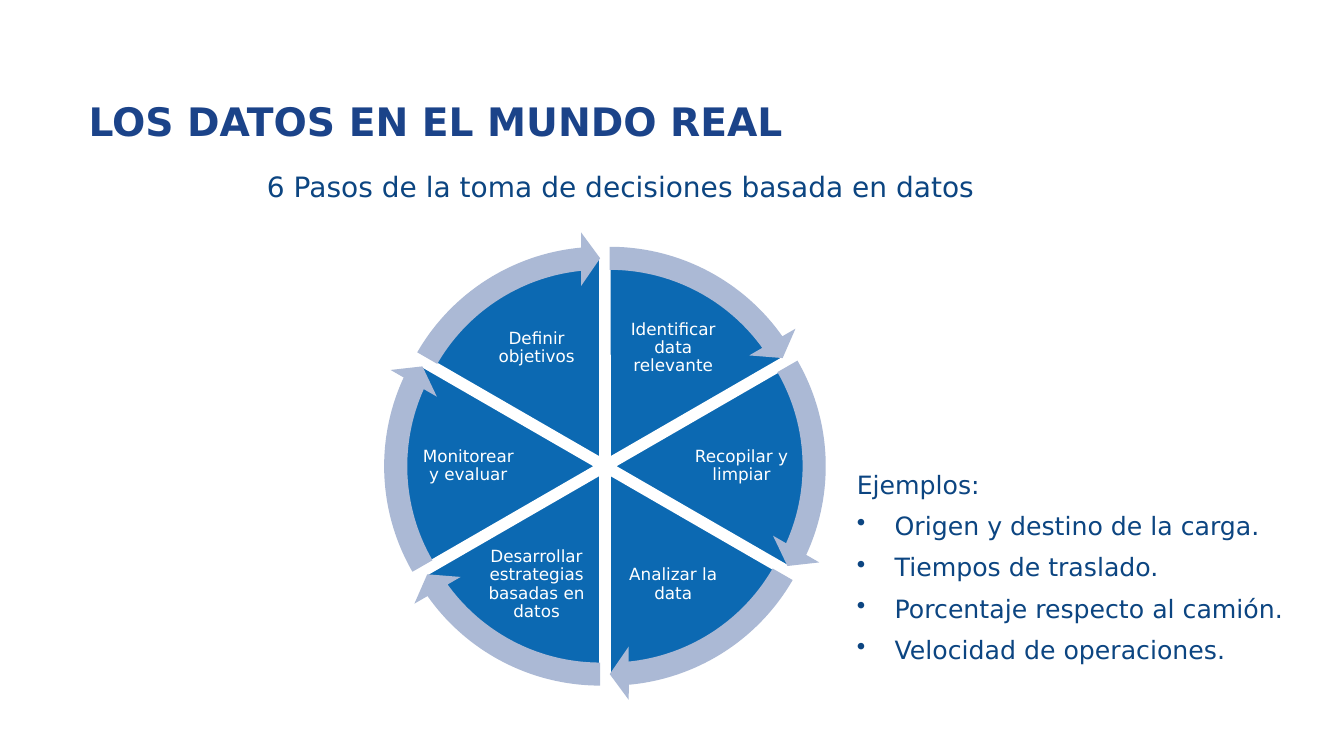
import math

import pptx
import pptx.dml.color
import pptx.enum.shapes
import pptx.enum.text
import pptx.oxml
import pptx.oxml.ns
import pptx.util

SHAPES = pptx.enum.shapes.MSO_SHAPE
CELL = 0.25  # side of one square grid cell, in inches
TURN = 216   # full circle in shape adjustment units


def cells(count):
    return pptx.util.Inches(count * CELL)


def color(hex_text):
    return pptx.dml.color.RGBColor.from_string(hex_text)


class Deck:
    font = "DejaVu Sans"
    title_blue, text_blue = "1B4389", "0C4581"
    wedge_blue, arrow_blue, white = "0C69B2", "ABB9D5", "FFFFFF"

    def __init__(self):
        self.file = pptx.Presentation()
        self.file.slide_width = pptx.util.Inches(13.33)
        self.file.slide_height = pptx.util.Inches(7.5)
        self.slide = self.file.slides.add_slide(self.file.slide_layouts[6])

    def text(self, box, lines, size, hex_text, bold=False, bullets_from=None):
        frame = self.slide.shapes.add_textbox(*map(cells, box)).text_frame
        frame.word_wrap = True
        frame.text = "\n".join(lines)
        for index, paragraph in enumerate(frame.paragraphs):
            if bullets_from is not None and index >= bullets_from:
                self.bullet(paragraph)
            paragraph.line_spacing = 0.9
            if index:
                paragraph.space_before = pptx.util.Pt(10)
            for run in paragraph.runs:
                run.font.name = self.font
                run.font.size = pptx.util.Pt(size)
                run.font.bold = bold
                run.font.color.rgb = color(hex_text)
        return frame

    def bullet(self, paragraph):
        properties = paragraph._p.get_or_add_pPr()
        indent = cells(1.5)
        properties.set("marL", str(indent))
        properties.set("indent", str(-indent))
        mark = f'<a:buChar {pptx.oxml.ns.nsdecls("a")} char="•"/>'
        properties.append(pptx.oxml.parse_xml(mark))

    def label(self, center, size, words):
        box = (center[0] - size[0] / 2, center[1] - size[1] / 2, *size)
        frame = self.text(box, [words], 12, self.white)
        frame.vertical_anchor = pptx.enum.text.MSO_ANCHOR.MIDDLE
        frame.margin_left = frame.margin_right = pptx.util.Inches(0.02)
        frame.margin_top = frame.margin_bottom = pptx.util.Inches(0.02)
        frame.paragraphs[0].alignment = pptx.enum.text.PP_ALIGN.CENTER

    def round_shape(self, kind, center, size, adjustments, fill, outline=None):
        corner = [middle - size / 2 for middle in center]
        shape = self.slide.shapes.add_shape(kind, *map(cells, (*corner, size, size)))
        shape.shadow.inherit = False
        for index, value in enumerate(adjustments):
            shape.adjustments[index] = value
        shape.fill.solid()
        shape.fill.fore_color.rgb = color(fill)
        if outline:
            shape.line.color.rgb = color(outline)
            shape.line.width = pptx.util.Pt(1.5)
        else:
            shape.line.fill.background()

    def cycle(self, hub, steps):
        sector = TURN / len(steps)
        starts = [(TURN * 0.75 + sector * i) % TURN for i in range(len(steps))]

        def outward(start, distance):
            angle = math.tau * (start + sector / 2) / TURN
            return (hub[0] + distance * math.cos(angle),
                    hub[1] + distance * math.sin(angle))

        # Wedges with their labels
        for start, words in zip(starts, steps):
            self.round_shape(SHAPES.PIE, outward(start, 0.38), 16,
                             (start, (start + sector) % TURN),
                             self.wedge_blue, self.white)
            self.label(outward(start, 5.42), (4.24, 3.24), words)

        # Ring of arrows on top
        for start in starts:
            tip = (start + 32.72) % TURN
            self.round_shape(SHAPES.CIRCULAR_ARROW, outward(start, 0.38), 17.96,
                             (5.1 / 100, 3.28, tip, start, 5.9 / 100),
                             self.arrow_blue)


def main():
    deck = Deck()

    # Examples
    deck.text((33.6, 18.56, 19.2, 9.32),
              ["Ejemplos:",
               "Origen y destino de la carga.",
               "Tiempos de traslado.",
               "Porcentaje respecto al camión.",
               "Velocidad de operaciones."],
              18, deck.text_blue, bullets_from=1)

    # Title
    deck.text((3.12, 3.88, 46, 2.28), ["LOS DATOS EN EL MUNDO REAL"],
              28, deck.title_blue, bold=True)

    # Six-step cycle, clockwise from the top
    deck.cycle((24, 18.5),
               ["Identificar data relevante",
                "Recopilar y limpiar",
                "Analizar la data",
                "Desarrollar estrategias basadas en datos",
                "Monitorear y evaluar",
                "Definir objetivos"])

    # Subtitle
    deck.text((10.2, 6.68, 31.88, 2.36),
              ["6 Pasos de la toma de decisiones basada en datos"],
              20, deck.text_blue)

    deck.file.save("out.pptx")


if __name__ == "__main__":
    main()
